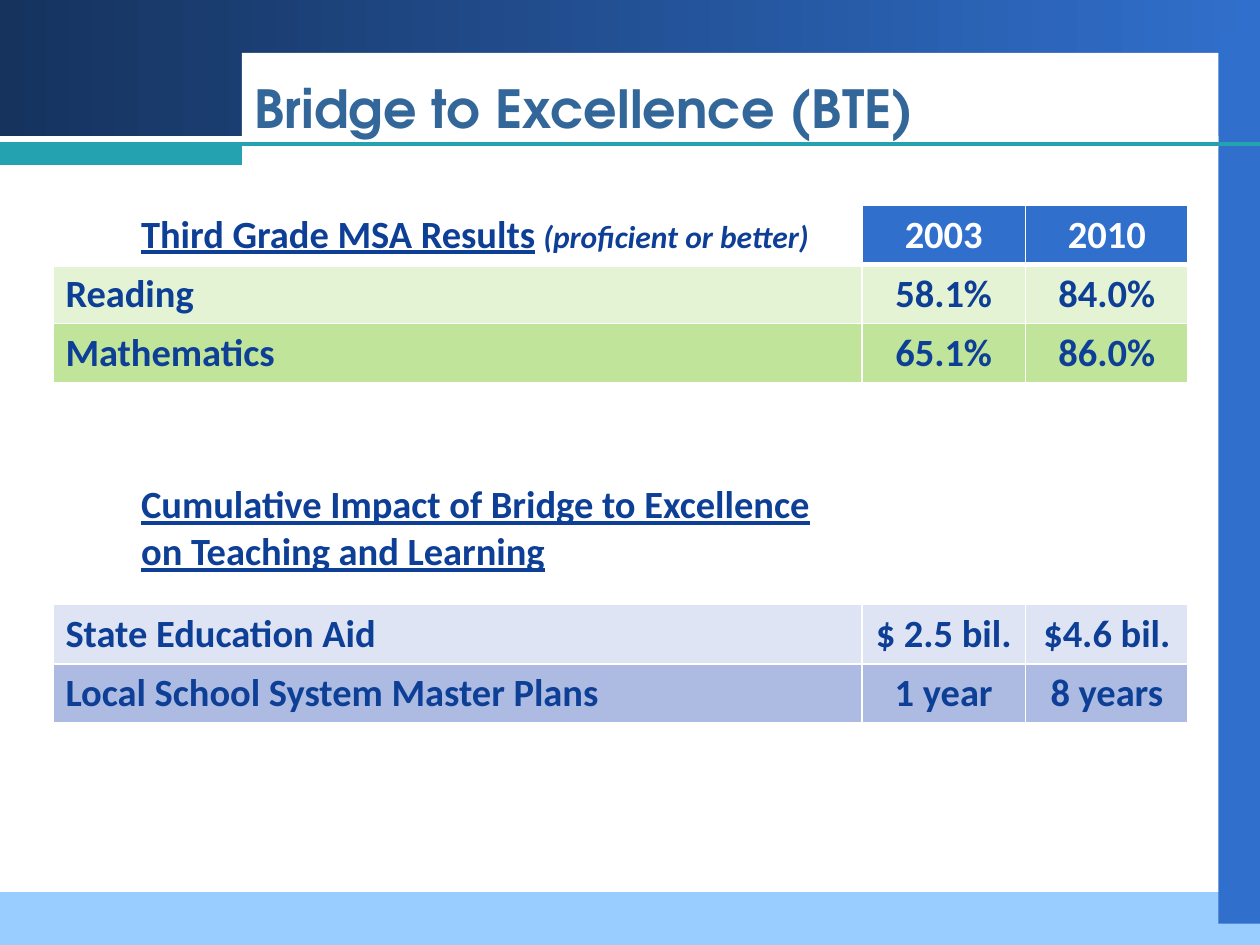
from lxml.etree import SubElement
from pptx import Presentation
from pptx.dml.color import RGBColor
from pptx.enum.shapes import MSO_CONNECTOR, MSO_SHAPE
from pptx.enum.text import MSO_ANCHOR, PP_ALIGN
from pptx.oxml.ns import qn
from pptx.util import Inches, Pt

COLORS = {
    "navy": "16335E", "blue": "306FCC", "sky": "99CCFF", "teal": "25A2AF",
    "white": "FFFFFF", "title": "336699", "text": "0E3F96",
    "light green": "E4F3D3", "green": "C1E49B",
    "light lilac": "DEE4F3", "lilac": "ADBBE2",
}
COLUMN_WIDTHS = (0.6, 5.82, 1.3, 1.29)
ROW_HEIGHTS = (0.47, 0.47, 0.47, 1.76, 0.47, 0.47)
# Row number: label, 2003 value, 2010 value, fill
DATA_ROWS = {
    1: ("Reading", "58.1%", "84.0%", "light green"),
    2: ("Mathematics", "65.1%", "86.0%", "green"),
    4: ("State Education Aid", "$ 2.5 bil.", "$4.6 bil.", "light lilac"),
    5: ("Local School System Master Plans", "1 year", "8 years", "lilac"),
}


def rgb(name):
    return RGBColor.from_string(COLORS[name])


def add_text(para, text, size=22, color="text", font="Calibri",
             underline=False, italic=False):
    span = para.add_run()
    span.text = text
    span.font.name = font
    span.font.size = Pt(size)
    span.font.bold = True
    span.font.italic = italic
    span.font.underline = underline
    span.font.color.rgb = rgb(color)


def add_bar(page, color, left, top, width, height):
    bar = page.shapes.add_shape(MSO_SHAPE.RECTANGLE, Inches(left), Inches(top),
                                Inches(width), Inches(height))
    bar.shadow.inherit = False
    bar.fill.solid()
    bar.fill.fore_color.rgb = rgb(color)
    bar.line.fill.background()
    return bar


def add_frame(page, width, height):
    """Draw the coloured bars around the page and the rule under the title."""
    rule_top = 1.14
    side = 0.33
    tab = 1.92
    top_bar = add_bar(page, "navy", 0, 0, width, 1.08)
    top_bar.fill.gradient()
    top_bar.fill.gradient_angle = 0
    for stop, color, position in zip(top_bar.fill.gradient_stops,
                                     ("navy", "blue"), (0, 1)):
        stop.color.rgb = rgb(color)
        stop.position = position
    add_bar(page, "sky", 0, height - 0.42, width, 0.42)
    add_bar(page, "blue", width - side, 0.25, side, 7.08)
    add_bar(page, "white", tab, 0.42, width - side - tab, 0.75)
    rule = page.shapes.add_connector(MSO_CONNECTOR.STRAIGHT, 0, Inches(rule_top),
                                     Inches(width), Inches(rule_top))
    rule.line.color.rgb = rgb("teal")
    rule.line.width = Pt(2.25)
    SubElement(rule._element.spPr, qn("a:effectLst"))
    add_bar(page, "teal", 0, rule_top, tab, 0.17)


def add_title(page, left, top, width, height):
    box = page.shapes.add_textbox(Inches(left), Inches(top),
                                  Inches(width), Inches(height))
    frame = box.text_frame
    frame.word_wrap = True
    frame.vertical_anchor = MSO_ANCHOR.MIDDLE
    para = frame.paragraphs[0]
    para.line_spacing = Pt(36)
    add_text(para, "Bridge to Excellence (BTE)", size=30, color="title",
             font="TeX Gyre Adventor")


def set_borders(cell, top=1, bottom=1):
    """Give the cell white borders; call before setting its fill."""
    widths = {"a:lnL": 1, "a:lnR": 1, "a:lnT": top, "a:lnB": bottom}
    properties = cell._tc.get_or_add_tcPr()
    for tag, width in widths.items():
        line = SubElement(properties, qn(tag), w=str(Pt(width)))
        fill = SubElement(line, qn("a:solidFill"))
        SubElement(fill, qn("a:srgbClr"), val=COLORS["white"])


def fill_cell(cell, color):
    cell.fill.solid()
    cell.fill.fore_color.rgb = rgb(color)


def add_value(cell, text, color="text"):
    para = cell.text_frame.paragraphs[0]
    para.alignment = PP_ALIGN.CENTER
    add_text(para, text, color=color)


def add_results_table(page, left, top):
    frame = page.shapes.add_table(
        len(ROW_HEIGHTS), len(COLUMN_WIDTHS), Inches(left), Inches(top),
        Inches(sum(COLUMN_WIDTHS)), Inches(sum(ROW_HEIGHTS)))
    table = frame.table
    table.first_row = False
    table.horz_banding = False
    for column, width in zip(table.columns, COLUMN_WIDTHS):
        column.width = Inches(width)
    for number, (row, height) in enumerate(zip(table.rows, ROW_HEIGHTS)):
        row.height = Inches(height)
        for cell in row.cells:
            set_borders(cell, top=3 if number == 1 else 1,
                        bottom=3 if number == 0 else 1)
            fill_cell(cell, DATA_ROWS[number][3] if number in DATA_ROWS else "white")

    heading = table.cell(0, 1).text_frame.paragraphs[0]
    add_text(heading, "Third Grade MSA Results", underline=True)
    add_text(heading, " ", size=20, italic=True)
    add_text(heading, "(proficient or better)", size=18, italic=True)
    for column, year in enumerate(("2003", "2010"), start=2):
        fill_cell(table.cell(0, column), "blue")
        add_value(table.cell(0, column), year, color="white")

    impact = table.cell(3, 1)
    impact.margin_top = Inches(0.79)
    add_text(impact.text_frame.paragraphs[0],
             "Cumulative Impact of Bridge to Excellence on Teaching and Learning",
             underline=True)

    for number, (label, before, after, _) in DATA_ROWS.items():
        table.cell(number, 0).merge(table.cell(number, 1))
        add_text(table.cell(number, 0).text_frame.paragraphs[0], label)
        add_value(table.cell(number, 2), before)
        add_value(table.cell(number, 3), after)


def main():
    deck = Presentation()
    deck.slide_width = Inches(10)
    deck.slide_height = Inches(7.5)
    page = deck.slides.add_slide(deck.slide_layouts[6])
    add_frame(page, 10, 7.5)
    add_title(page, 1.92, 0.45, 7.92, 0.8)
    add_results_table(page, 0.42, 1.63)
    deck.save("out.pptx")


if __name__ == "__main__":
    main()
